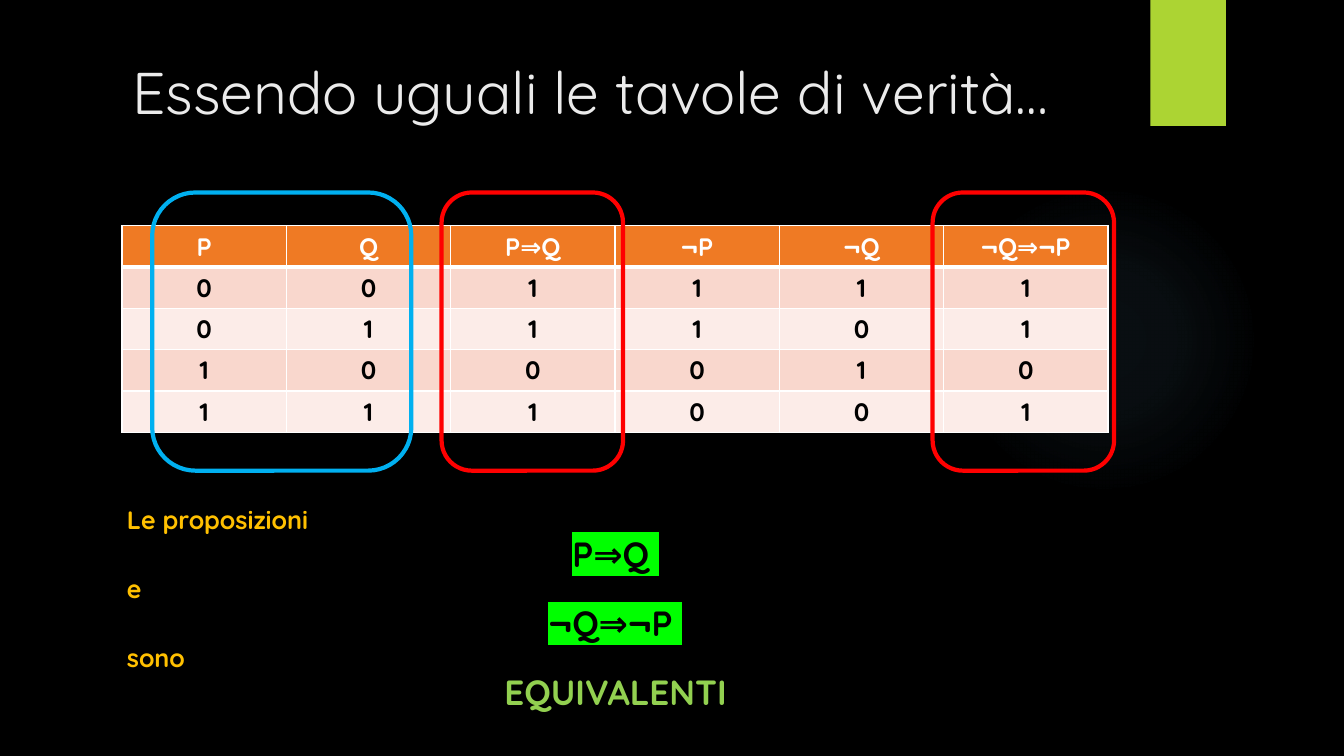
from pptx import Presentation
from pptx.dml.color import RGBColor as RGB
from pptx.enum.shapes import MSO_SHAPE as Shape
from pptx.enum.text import MSO_ANCHOR as Anchor, PP_ALIGN as Align
from pptx.oxml import parse_xml
from pptx.oxml.ns import nsdecls
from pptx.util import Inches, Pt

# Content
TITLE = "Essendo uguali le tavole di verità…"
HEADS = ["P", "Q", "P⇒Q", "¬P", "¬Q", "¬Q⇒¬P"]
TRUTH = ["001111", "011101", "100010", "111001"]
LINES = [  # text, style
    ("Le proposizioni", "label"),
    ("P⇒Q ", "formula"),
    ("e", "label"),
    ("¬Q⇒¬P ", "formula"),
    ("sono", "label"),
    ("EQUIVALENTI", "result"),
]
FRAMES = [(1.51, 2.57, "blue"), (4.38, 1.8, "red"), (9.25, 1.8, "red")]  # left, width, colour


class Theme:
    font = "Quicksand"
    title, text, big = 42, 18, 25
    color = dict(back="000000", title="EBEBEB", tab="ACD433", glow="7AC4F0",
                 head="EF7A24", odd="F9D7CD", even="FCECE8", white="FFFFFF",
                 black="000000", blue="00B0F0", red="FF0000",
                 gold="FFC000", mark="00FF00", green="92D050")


STYLES = {  # size, colour, alignment, highlight
    "label": (Theme.text, "gold", Align.LEFT, None),
    "formula": (Theme.big, "black", Align.CENTER, "mark"),
    "result": (Theme.big, "green", Align.CENTER, None),
}


def rgb(name):
    return RGB.from_string(Theme.color[name])


def xml(tag, attrs, body):
    return parse_xml(f'<a:{tag} {nsdecls("a")} {attrs}>{body}</a:{tag}>')


def solid(name, extra=""):
    return f'<a:srgbClr val="{Theme.color[name]}">{extra}</a:srgbClr>'


def write(para, text, size, color, align, bold=True):
    para.text = text
    para.alignment = align
    run = para.runs[0]
    font = run.font
    font.name, font.size, font.bold = Theme.font, Pt(size), bold
    font.color.rgb = rgb(color)
    return run


def add_shape(kind, *box):
    shape = slide.shapes.add_shape(kind, *map(Inches, box))
    shape.shadow.inherit = False
    shape.line.fill.background()
    return shape


def add_box(*box):
    frame = slide.shapes.add_textbox(*map(Inches, box)).text_frame
    frame.word_wrap = True
    frame.vertical_anchor = Anchor.TOP
    return frame


def edge(cell, sides):
    props = cell._tc.get_or_add_tcPr()
    for i, (side, width) in enumerate(sides):
        body = f'<a:solidFill>{solid("white")}</a:solidFill>'
        props.insert(i, xml("ln" + side, f'w="{Pt(width)}"', body))


prs = Presentation()
prs.slide_width, prs.slide_height = Inches(13.33), Inches(7.5)
slide = prs.slides.add_slide(prs.slide_layouts[6])
slide.background.fill.solid()
slide.background.fill.fore_color.rgb = rgb("back")

# Soft glow
glow = add_shape(Shape.OVAL, 9.41, 1.83, 3.08, 3.08)
stops = "".join(
    f'<a:gs pos="{pos * 1000}">{solid("glow", f"""<a:alpha val="{alpha * 1000}"/>""")}</a:gs>'
    for pos, alpha in [(0, 7), (36, 6), (69, 0)])
center = '<a:fillToRect l="50000" t="50000" r="50000" b="50000"/>'
glow._element.spPr.insert(2, xml(
    "gradFill", 'rotWithShape="1"',
    f'<a:gsLst>{stops}</a:gsLst><a:path path="circle">{center}</a:path>'))

# Green tab
tab = add_shape(Shape.RECTANGLE, 11.41, 0, 0.75, 1.25)
tab.fill.solid()
tab.fill.fore_color.rgb = rgb("tab")
tab._element.spPr.find("{*}effectLst").append(xml(
    "outerShdw", f'blurRad="{Pt(3)}" dist="{Pt(2)}" dir="5400000" rotWithShape="0"',
    solid("black", '<a:alpha val="45000"/>')))

# Title
head = add_box(0.71, 0.5, 10.29, 1.53)
write(head.paragraphs[0], TITLE, Theme.title, "title", Align.CENTER, False)

# Truth table
rows = [HEADS] + [list(row) for row in TRUTH]
table = slide.shapes.add_table(len(rows), len(HEADS), Inches(1.21), Inches(2.24),
                               Inches(9.78), Inches(2.07)).table
table.horz_banding = False
for r, row in enumerate(rows):
    table.rows[r].height = Inches(0.41)
    fill = "head" if r == 0 else "odd" if r % 2 else "even"
    for c, text in enumerate(row):
        cell = table.cell(r, c)
        cell.fill.solid()
        cell.fill.fore_color.rgb = rgb(fill)
        edge(cell, [("L", 1), ("R", 1), ("T", 3 if r == 1 else 1), ("B", 3 if r == 0 else 1)])
        write(cell.text_frame.paragraphs[0], text, Theme.text,
              "black" if r else "white", Align.CENTER)

# Frames around the compared columns
for left, width, color in FRAMES:
    frame = add_shape(Shape.ROUNDED_RECTANGLE, left, 1.91, width, 2.76)
    frame.fill.background()
    frame.line.color.rgb = rgb(color)
    frame.line.width = Pt(3)

# Conclusion
body = add_box(1.16, 4.97, 9.89, 2.57)
for i, (text, style) in enumerate(LINES):
    size, color, align, mark = STYLES[style]
    para = body.add_paragraph() if i else body.paragraphs[0]
    run = write(para, text, size, color, align)
    para.line_spacing = 0.96
    if mark:
        latin = run._r.rPr.find("{*}latin")
        latin.addprevious(xml("highlight", "", solid(mark)))

prs.save("out.pptx")
